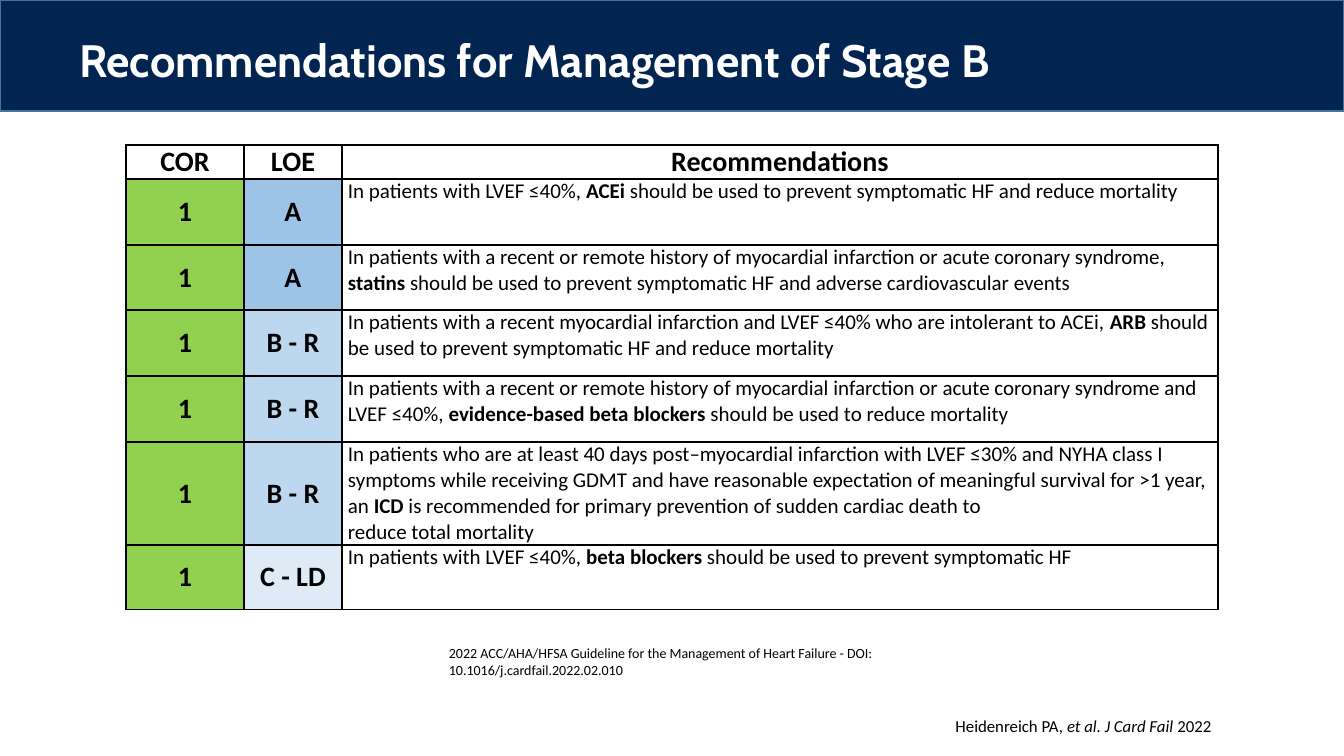
"""Build the slide on recommendations for management of stage B heart failure."""
import lxml.etree
import pptx
import pptx.dml.color
import pptx.enum.shapes
import pptx.enum.text
import pptx.oxml.ns
import pptx.util

TITLE = "Recommendations for Management of Stage B"
HEADERS = ["COR", "LOE", "Recommendations"]
ROWS = [
    ("1", "A", [[("In patients with LVEF ≤40%, ", False), ("ACEi ", True),
                 ("should be used to prevent symptomatic HF and reduce mortality", False)]]),
    ("1", "A", [[("In patients with a recent or remote history of myocardial infarction "
                  "or acute coronary syndrome, ", False), ("statins ", True),
                 ("should be used to prevent symptomatic HF and adverse cardiovascular events", False)]]),
    ("1", "B - R", [[("In patients with a recent myocardial infarction and LVEF ≤40% "
                      "who are intolerant to ACEi, ", False), ("ARB", True),
                     (" should be used to prevent symptomatic HF and reduce mortality", False)]]),
    ("1", "B - R", [[("In patients with a recent or remote history of myocardial infarction "
                      "or acute coronary syndrome and LVEF ≤40%, ", False),
                     ("evidence-based beta blockers ", True),
                     ("should be used to reduce mortality", False)]]),
    ("1", "B - R", [[("In patients who are at least 40 days post–myocardial infarction with LVEF ≤30% "
                      "and NYHA class I symptoms while receiving GDMT and have reasonable expectation "
                      "of meaningful survival for >1 year, an ", False), ("ICD", True),
                     (" is recommended for primary prevention of sudden cardiac death to", False)],
                    [("reduce total mortality", False)]]),
    ("1", "C - LD", [[("In patients with LVEF ≤40%, ", False), ("beta blockers ", True),
                      ("should be used to prevent symptomatic HF", False)]]),
]
GUIDELINE = ("2022 ACC/AHA/HFSA Guideline for the Management of Heart Failure - DOI: "
             "10.1016/j.cardfail.2022.02.010")
CITATION = [("Heidenreich PA, ", False), ("et al. J Card Fail ", True), ("2022", False)]
COR_FILL = "92D050"
LOE_FILLS = {"A": "9DC3E6", "B - R": "BDD7EE", "C - LD": "DEEBF7"}
COL_WIDTHS = [118, 98, 876]
ROW_HEIGHTS = [34, 66, 65, 66, 66, 103, 65]
ALIGN = pptx.enum.text.PP_ALIGN
ANCHOR = pptx.enum.text.MSO_ANCHOR


def px(n):
    return pptx.util.Emu(round(n * 914400 / 100.8))


def rgb(value):
    return pptx.dml.color.RGBColor.from_string(value)


def add_run(p, text, size, bold=False, italic=False, font="Calibri", color="000000"):
    r = p.add_run()
    r.text = text
    r.font.size = pptx.util.Pt(size)
    r.font.name = font
    r.font.bold = bold
    r.font.italic = italic
    r.font.color.rgb = rgb(color)


def add_text_box(slide, left, top, width, height):
    tf = slide.shapes.add_textbox(px(left), px(top), px(width), px(height)).text_frame
    tf.word_wrap = True
    return tf


def set_borders(cell):
    tcPr = cell._tc.get_or_add_tcPr()
    qn = pptx.oxml.ns.qn
    for i, side in enumerate(("a:lnL", "a:lnR", "a:lnT", "a:lnB")):
        ln = lxml.etree.Element(qn(side), w=str(pptx.util.Pt(1)))
        fill = lxml.etree.SubElement(ln, qn("a:solidFill"))
        lxml.etree.SubElement(fill, qn("a:srgbClr"), val="000000")
        tcPr.insert(i, ln)


def fill_cell(cell, paragraphs, size, fill=None, align=ALIGN.LEFT, anchor=ANCHOR.TOP):
    cell.margin_left = cell.margin_right = px(6)
    cell.margin_top = cell.margin_bottom = 0
    cell.vertical_anchor = anchor
    if fill:
        cell.fill.solid()
        cell.fill.fore_color.rgb = rgb(fill)
    else:
        cell.fill.background()
    tf = cell.text_frame
    for i, runs in enumerate(paragraphs):
        p = tf.add_paragraph() if i else tf.paragraphs[0]
        p.alignment = align
        for text, bold in runs:
            add_run(p, text, size, bold)
    set_borders(cell)


def add_header(slide):
    sp = slide.shapes.add_shape(pptx.enum.shapes.MSO_SHAPE.RECTANGLE, 0, 0, px(1344), px(111))
    sp.shadow.inherit = False
    sp.fill.solid()
    sp.fill.fore_color.rgb = rgb("012550")
    sp.line.color.rgb = rgb("43739E")
    sp.line.width = pptx.util.Pt(1)
    tf = add_text_box(slide, 79, 38, 1189, 82)
    tf.margin_left = tf.margin_top = tf.margin_bottom = 0
    p = tf.paragraphs[0]
    p.line_spacing = 0.9
    add_run(p, TITLE, 32.4, bold=True, font="Cabin", color="FFFFFF")


def add_recommendations(slide):
    table = slide.shapes.add_table(len(ROW_HEIGHTS), len(COL_WIDTHS), px(126), px(145),
                                   px(sum(COL_WIDTHS)), px(sum(ROW_HEIGHTS))).table
    table.first_row = table.horz_banding = False
    for col, width in zip(table.columns, COL_WIDTHS):
        col.width = px(width)
    for row, height in zip(table.rows, ROW_HEIGHTS):
        row.height = px(height)
    for c, label in enumerate(HEADERS):
        fill_cell(table.cell(0, c), [[(label, True)]], 20, "FFFFFF", ALIGN.CENTER, ANCHOR.MIDDLE)
    for r, (cor, loe, advice) in enumerate(ROWS, 1):
        for c, (label, fill) in enumerate([(cor, COR_FILL), (loe, LOE_FILLS[loe])]):
            fill_cell(table.cell(r, c), [[(label, True)]], 20, fill, ALIGN.CENTER, ANCHOR.MIDDLE)
        fill_cell(table.cell(r, 2), advice, 15)


def add_sources(slide):
    p = add_text_box(slide, 934, 713, 299, 42).paragraphs[0]
    p.alignment = ALIGN.CENTER
    p.line_spacing = 0.9
    for text, italic in CITATION:
        add_run(p, text, 12, italic=italic)
    p = add_text_box(slide, 439, 640, 588, 42).paragraphs[0]
    add_run(p, GUIDELINE, 10)


def main():
    prs = pptx.Presentation()
    prs.slide_width, prs.slide_height = px(1344), px(756)
    slide = prs.slides.add_slide(prs.slide_layouts[6])
    add_header(slide)
    add_recommendations(slide)
    add_sources(slide)
    prs.save("out.pptx")


if __name__ == "__main__":
    main()
